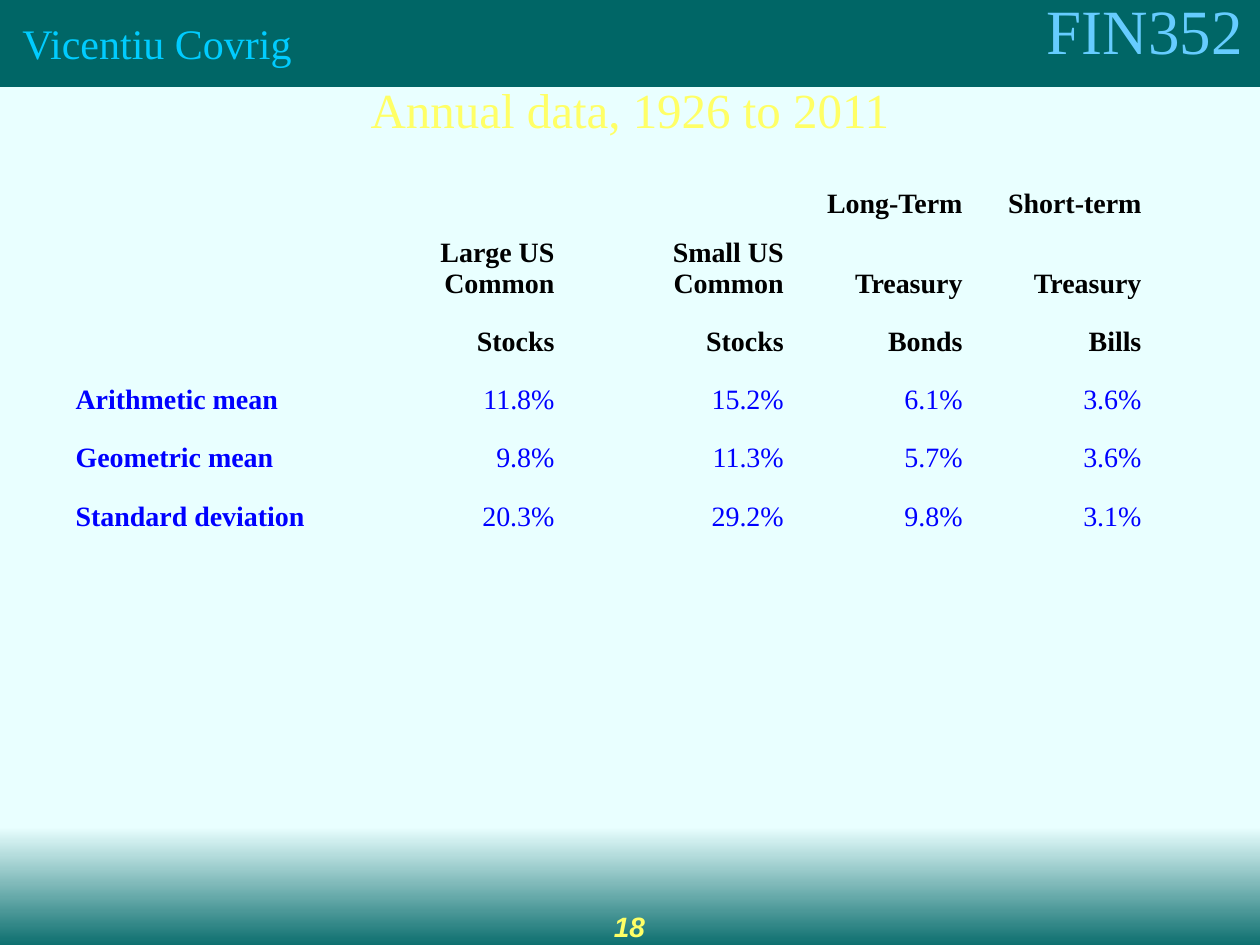
from dataclasses import dataclass

from pptx import Presentation
from pptx.dml.color import RGBColor
from pptx.enum.shapes import MSO_SHAPE
from pptx.enum.text import MSO_ANCHOR, MSO_AUTO_SIZE, PP_ALIGN
from pptx.oxml.ns import qn
from pptx.slide import Slide
from pptx.util import Inches, Pt

LEFT, CENTER, RIGHT = PP_ALIGN.LEFT, PP_ALIGN.CENTER, PP_ALIGN.RIGHT
TOP, MIDDLE, BOTTOM = MSO_ANCHOR.TOP, MSO_ANCHOR.MIDDLE, MSO_ANCHOR.BOTTOM
FIT_SHAPE, NO_FIT = MSO_AUTO_SIZE.SHAPE_TO_FIT_TEXT, MSO_AUTO_SIZE.NONE
RECTANGLE = MSO_SHAPE.RECTANGLE

COLORS = {
    "background": "E9FFFF",
    "teal": "006666",
    "course": "66CCFF",
    "author": "00CCFF",
    "yellow": "FFFF66",
    "heading": "000000",
    "data": "0000FF",
}
SERIF = "Times New Roman"
NO_GRID_STYLE = "{2D5ABB26-0587-4C30-8999-92F81FD0307C}"
COLUMN_WIDTHS = (2.5, 1.5, 1.82, 1.42, 1.42)
ROW_HEIGHTS = (0.46, 0.64, 0.46, 0.46, 0.46, 0.47)
HEADING_ROWS = 3
RETURNS = (
    ("", "", "", "Long-Term", "Short-term"),
    ("", "Large US Common", "Small US Common", "Treasury", "Treasury"),
    ("", "Stocks", "Stocks", "Bonds", "Bills"),
    ("Arithmetic mean", "11.8%", "15.2%", "6.1%", "3.6%"),
    ("Geometric mean", "9.8%", "11.3%", "5.7%", "3.6%"),
    ("Standard deviation", "20.3%", "29.2%", "9.8%", "3.1%"),
)


@dataclass(frozen=True)
class Label:
    text: str
    box: tuple[float, float, float, float]
    size: int
    color: str
    align: PP_ALIGN = CENTER
    font: str = SERIF
    emphasis: bool = False
    anchor: MSO_ANCHOR = TOP
    line_spacing: float = 1.0
    fit: MSO_AUTO_SIZE = NO_FIT


LABELS = (
    Label("FIN352", (4.29, -0.12, 5.67, 0.7), 36, "course", RIGHT, fit=FIT_SHAPE),
    Label("Vicentiu Covrig", (0.08, 0.2, 4.08, 0.38), 24, "author", LEFT,
          line_spacing=0.7, fit=FIT_SHAPE),
    Label("18", (3.83, 7.17, 2.33, 0.5), 16, "yellow", font="Arial", emphasis=True),
    Label("Annual data, 1926 to 2011", (0.5, 0.5, 9, 0.84), 28, "yellow",
          anchor=MIDDLE, line_spacing=0.7),
)


def rgb(name: str) -> RGBColor:
    return RGBColor.from_string(COLORS[name])


def add_band(slide: Slide, box: tuple[float, float, float, float], *colors: str) -> None:
    band = slide.shapes.add_shape(RECTANGLE, *map(Inches, box))
    band.shadow.inherit = False
    band.line.fill.background()
    if len(colors) == 1:
        band.fill.solid()
        band.fill.fore_color.rgb = rgb(colors[0])
        return
    band.fill.gradient()
    band.fill.gradient_angle = 270
    for stop, color in zip(band.fill.gradient_stops, colors):
        stop.color.rgb = rgb(color)


def add_label(slide: Slide, label: Label) -> None:
    frame = slide.shapes.add_textbox(*map(Inches, label.box)).text_frame
    frame.word_wrap = True
    frame.auto_size = label.fit
    frame.vertical_anchor = label.anchor
    paragraph = frame.paragraphs[0]
    paragraph.text = label.text
    paragraph.alignment = label.align
    paragraph.line_spacing = label.line_spacing
    font = paragraph.font
    font.name, font.size = label.font, Pt(label.size)
    font.bold = font.italic = label.emphasis
    font.color.rgb = rgb(label.color)


def add_returns_table(slide: Slide) -> None:
    table = slide.shapes.add_table(
        len(ROW_HEIGHTS), len(COLUMN_WIDTHS), Inches(0.5), Inches(1.33),
        Inches(sum(COLUMN_WIDTHS)), Inches(sum(ROW_HEIGHTS)),
    ).table
    table.first_row = table.horz_banding = False
    table._tbl.tblPr.find(qn("a:tableStyleId")).text = NO_GRID_STYLE
    for column, width in zip(table.columns, COLUMN_WIDTHS):
        column.width = Inches(width)
    for row_index, (row, height) in enumerate(zip(table.rows, ROW_HEIGHTS)):
        row.height = Inches(height)
        is_heading = row_index < HEADING_ROWS
        for column_index, cell in enumerate(row.cells):
            cell.fill.background()
            cell.vertical_anchor = BOTTOM
            paragraph = cell.text_frame.paragraphs[0]
            paragraph.text = RETURNS[row_index][column_index]
            paragraph.alignment = RIGHT if column_index else LEFT
            indent = Inches(0.38)
            properties = paragraph._p.get_or_add_pPr()
            properties.set("marL", str(indent))
            properties.set("indent", str(-indent))
            font = paragraph.font
            font.name, font.size = SERIF, Pt(16)
            font.bold = is_heading or column_index == 0
            font.color.rgb = rgb("heading" if is_heading else "data")


def main() -> None:
    deck = Presentation()
    deck.slide_width, deck.slide_height = Inches(10), Inches(7.5)
    slide = deck.slides.add_slide(deck.slide_layouts[6])
    slide.background.fill.solid()
    slide.background.fill.fore_color.rgb = rgb("background")
    add_band(slide, (-0.02, 6.56, 10.12, 1), "background", "teal")
    add_band(slide, (0, 0, 10.06, 0.69), "teal")
    for label in LABELS:
        add_label(slide, label)
    add_returns_table(slide)
    deck.save("out.pptx")


if __name__ == "__main__":
    main()
